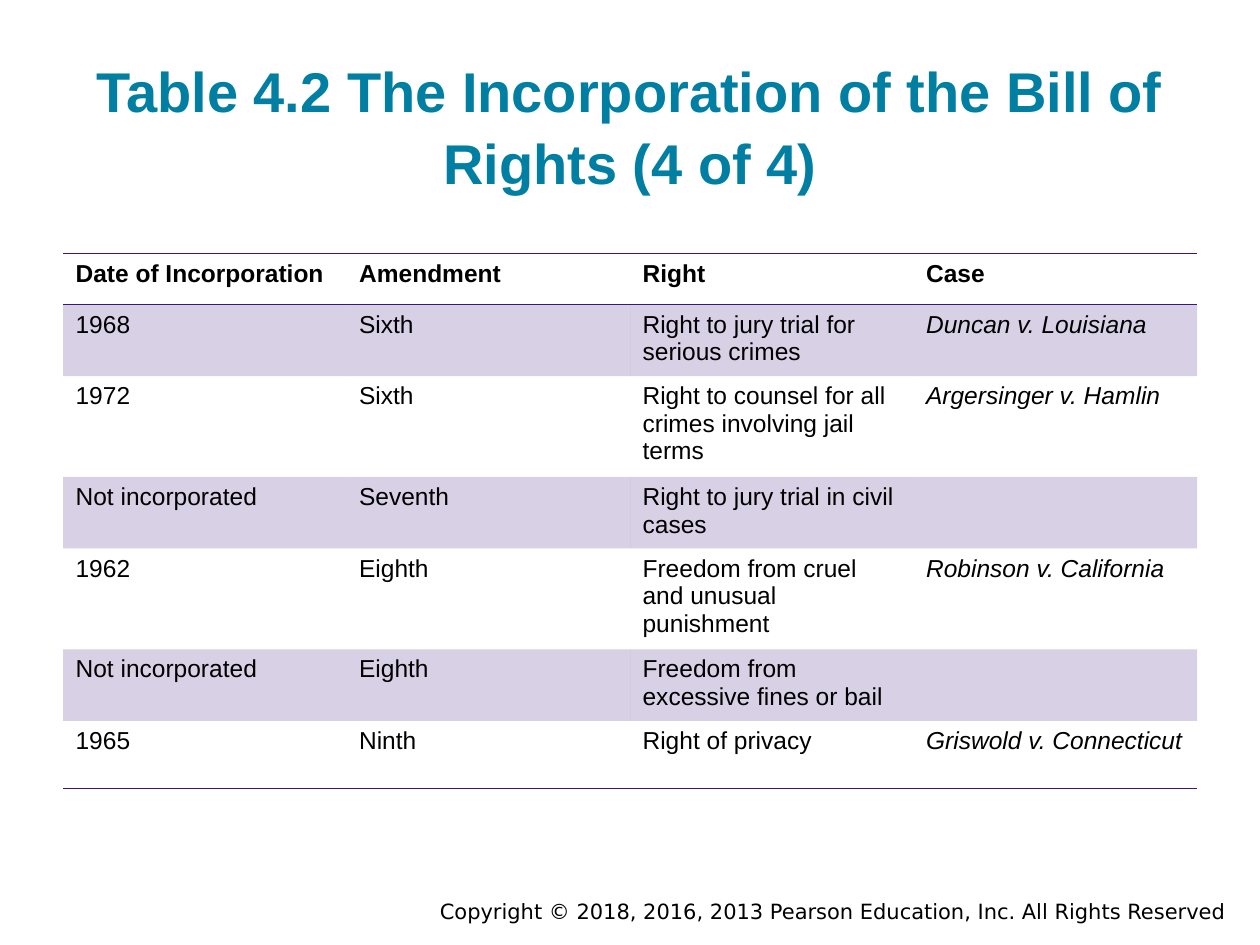
import dataclasses

import pptx
import pptx.dml.color
import pptx.enum.text
import pptx.oxml
import pptx.oxml.ns
import pptx.util
from pptx.util import Cm

Align = pptx.enum.text.PP_ALIGN
Anchor = pptx.enum.text.MSO_ANCHOR


@dataclasses.dataclass(frozen=True)
class Theme:
    teal: str = "007FA3"
    plum: str = "3C1581"
    black: str = "000000"
    face: str = "Arial"
    foot_face: str = "DejaVu Sans"
    head: int = 32
    body: int = 14
    foot: int = 12


theme = Theme()


def style(para, face, size, color, bold=False, italic=False):
    for run in para.runs:
        font = run.font
        font.name, font.size = face, pptx.util.Pt(size)
        font.color.rgb = pptx.dml.color.RGBColor.from_string(color)
        font.bold, font.italic = bold, italic


def rule(cell, sides):
    """Draw 1 pt plum borders; the sides are T and B, in that order."""
    for spot, side in enumerate(sides):
        line = pptx.oxml.parse_xml(
            f'<a:ln{side} {pptx.oxml.ns.nsdecls("a")} w="12700"><a:solidFill>'
            f'<a:srgbClr val="{theme.plum}"/></a:solidFill></a:ln{side}>')
        cell._tc.get_or_add_tcPr().insert(spot, line)


deck = pptx.Presentation()
deck.slide_width, deck.slide_height = Cm(25.4), Cm(19.05)
slide = deck.slides.add_slide(deck.slide_layouts[6])

# Copyright line
foot = slide.shapes.add_textbox(Cm(5.08), Cm(17.98), Cm(19.89), Cm(0.76))
foot.text_frame.word_wrap = True
foot.text_frame.text = "Copyright © 2018, 2016, 2013 Pearson Education, Inc. All Rights Reserved"
para = foot.text_frame.paragraphs[0]
para.alignment = Align.RIGHT
style(para, theme.foot_face, theme.foot, theme.black)

# Title
title = slide.shapes.add_textbox(Cm(1.27), Cm(0.81), Cm(22.86), Cm(3.38))
frame = title.text_frame
frame.word_wrap = True
frame.vertical_anchor = Anchor.BOTTOM
frame.margin_top = frame.margin_bottom = Cm(0.25)
frame.text = "Table 4.2 The Incorporation of the Bill of Rights (4 of 4)"
para = frame.paragraphs[0]
para.alignment = Align.CENTER
para.line_spacing = 1.06
style(para, theme.face, theme.head, theme.teal, bold=True)

# Table
rows = [
    ("Date of Incorporation", "Amendment", "Right", "Case"),
    ("1968", "Sixth", "Right to jury trial for serious crimes", "Duncan v. Louisiana"),
    ("1972", "Sixth", "Right to counsel for all crimes involving jail terms",
     "Argersinger v. Hamlin"),
    ("Not incorporated", "Seventh", "Right to jury trial in civil cases", ""),
    ("1962", "Eighth", "Freedom from cruel and unusual punishment",
     "Robinson v. California"),
    ("Not incorporated", "Eighth", "Freedom from excessive fines or bail", ""),
    ("1965", "Ninth", "Right of privacy", "Griswold v. Connecticut"),
]
highs = [1.03, 1.36, 1.93, 1.36, 1.93, 1.36, 1.36]
last = len(rows) - 1

grid = slide.shapes.add_table(
    len(rows), 4, Cm(1.27), Cm(5.11), Cm(22.86), Cm(sum(highs))).table
grid.first_row = grid.horz_banding = False
plain = "{2D5ABB26-0587-4C30-8999-92F81FD0307C}"  # no style, no grid
grid._tbl.tblPr.find(pptx.oxml.ns.qn("a:tableStyleId")).text = plain

for r, (row, high) in enumerate(zip(rows, highs)):
    grid.rows[r].height = Cm(high)
    for c, text in enumerate(row):
        cell = grid.cell(r, c)
        cell.text_frame.text = text
        style(cell.text_frame.paragraphs[0], theme.face, theme.body, theme.black,
              bold=r == 0, italic=r > 0 and c == 3)
        if r % 2:
            cell.fill.solid()
            cell.fill.fore_color.rgb = pptx.dml.color.RGBColor.from_string(theme.plum)
            tint = cell._tc.tcPr.find(".//" + pptx.oxml.ns.qn("a:srgbClr"))
            tint.append(pptx.oxml.parse_xml(
                f'<a:alpha {pptx.oxml.ns.nsdecls("a")} val="20000"/>'))
        else:
            cell.fill.background()
        if r == 0:
            rule(cell, "TB")
        elif r == last:
            rule(cell, "B")

deck.save("out.pptx")
